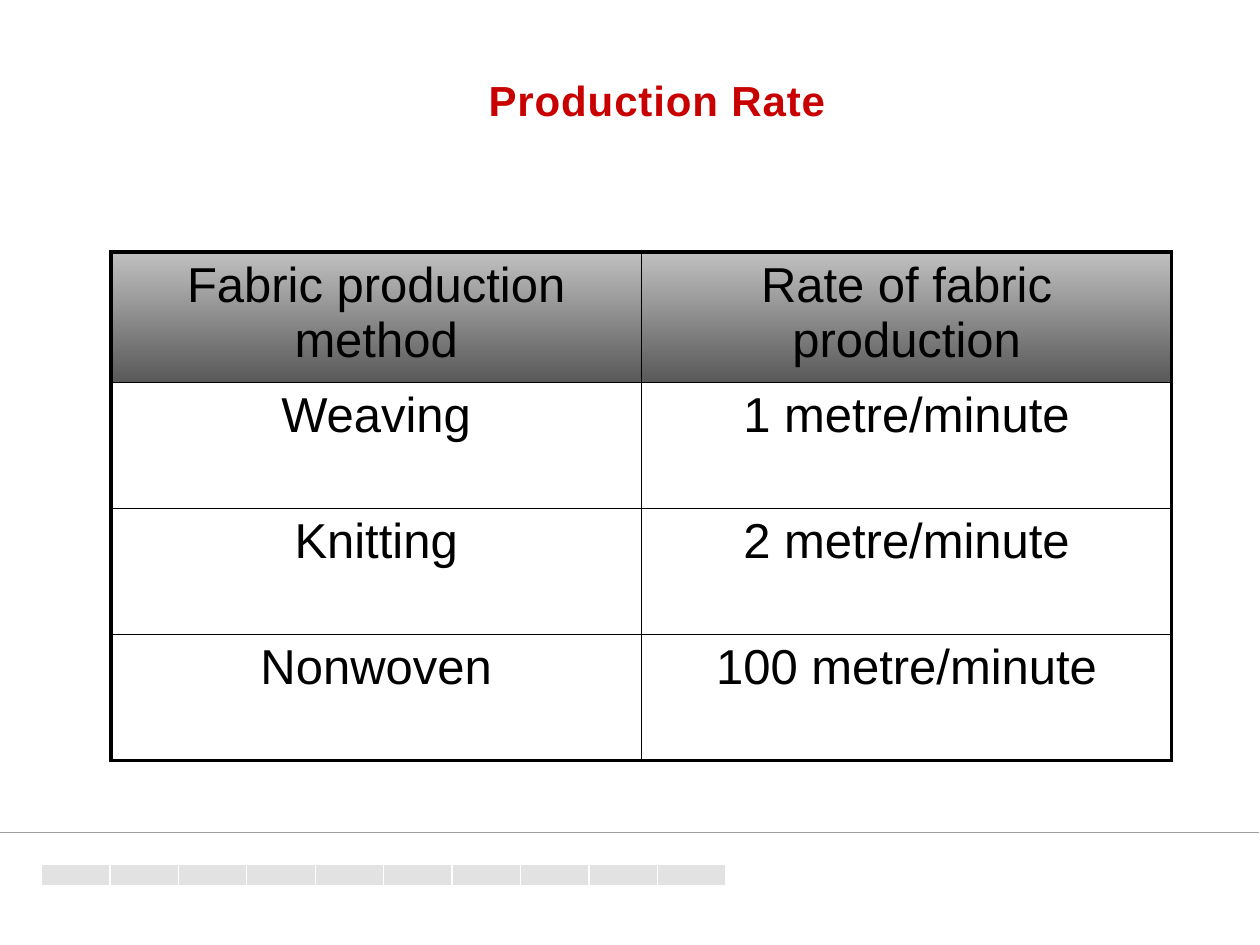
from dataclasses import dataclass

from lxml.etree import SubElement
from pptx import Presentation
from pptx.dml.color import RGBColor
from pptx.enum.shapes import MSO_CONNECTOR, MSO_SHAPE
from pptx.enum.text import PP_ALIGN
from pptx.oxml.ns import qn
from pptx.util import Inches, Pt

BLACK = RGBColor(0x00, 0x00, 0x00)
WHITE = RGBColor(0xFF, 0xFF, 0xFF)
RED = RGBColor(0xC9, 0x00, 0x00)
BLOCK_GREY = RGBColor(0xE2, 0xE2, 0xE2)
RULE_GREY = RGBColor(0x9F, 0x9F, 0x9F)
HEADER_LIGHT = RGBColor(0xC0, 0xC0, 0xC0)
HEADER_DARK = RGBColor(0x59, 0x59, 0x59)

SLIDE_WIDTH, SLIDE_HEIGHT = Inches(10), Inches(7.5)
OUTER_BORDER, INNER_BORDER = Pt(2.25), Pt(1)
BLOCK_COUNT = 10


@dataclass(frozen=True)
class Area:
    left: float
    top: float
    width: float
    height: float

    def lengths(self) -> tuple[int, ...]:
        return tuple(Inches(value) for value in (self.left, self.top, self.width, self.height))

    def column(self, index: int, count: int) -> "Area":
        width = self.width / count
        return Area(self.left + index * width, self.top, width, self.height)


@dataclass(frozen=True)
class ProductionRate:
    method: str
    rate: str


FOOTER_STRIP = Area(0.33, 6.86, 5.43, 0.17)
TITLE_AREA = Area(3.02, 0.5, 4.39, 0.5)
TABLE_AREA = Area(0.88, 2, 8.42, 4)
RATES = [
    ProductionRate("Fabric production method", "Rate of fabric production"),
    ProductionRate("Weaving", "1 metre/minute"),
    ProductionRate("Knitting", "2 metre/minute"),
    ProductionRate("Nonwoven", "100 metre/minute"),
]


def write_text(frame, text: str, *, size: float, color: RGBColor,
               bold: bool = False, spacing: float = 0) -> None:
    frame.word_wrap = True
    paragraph = frame.paragraphs[0]
    paragraph.alignment = PP_ALIGN.CENTER
    run = paragraph.add_run()
    run.text = text
    run.font.name = "Arial"
    run.font.size = Pt(size)
    run.font.bold = bold
    run.font.color.rgb = color
    if spacing:
        run.font._element.set("spc", str(round(spacing * 100)))


def draw_footer(slide) -> None:
    for index in range(BLOCK_COUNT):
        area = FOOTER_STRIP.column(index, BLOCK_COUNT)
        block = slide.shapes.add_shape(MSO_SHAPE.RECTANGLE, *area.lengths())
        block.shadow.inherit = False
        block.fill.solid()
        block.fill.fore_color.rgb = BLOCK_GREY
        block.line.color.rgb = WHITE
        block.line.width = Pt(0.75)
    height = Inches(6.61)
    rule = slide.shapes.add_connector(MSO_CONNECTOR.STRAIGHT, 0, height, Inches(9.99), height)
    rule.line.color.rgb = RULE_GREY
    rule.line.width = Pt(0.75)
    SubElement(rule._element.spPr, qn("a:effectLst"))


def draw_title(slide) -> None:
    frame = slide.shapes.add_textbox(*TITLE_AREA.lengths()).text_frame
    frame.margin_top = Inches(0.09)
    write_text(frame, "Production Rate", size=24, color=RED, bold=True, spacing=0.5)


def set_borders(cell, outer_sides: dict[str, bool]) -> None:
    properties = cell._tc.get_or_add_tcPr()
    for side, is_outer in outer_sides.items():
        width = OUTER_BORDER if is_outer else INNER_BORDER
        border = SubElement(properties, qn(f"a:ln{side}"), w=str(int(width)))
        fill = SubElement(border, qn("a:solidFill"))
        SubElement(fill, qn("a:srgbClr"), val=str(BLACK))


def fill_cell(cell, is_header: bool) -> None:
    if not is_header:
        cell.fill.background()
        return
    cell.fill.gradient()
    cell.fill.gradient_angle = 270
    for stop, position, color in zip(cell.fill.gradient_stops, (0, 1), (HEADER_LIGHT, HEADER_DARK)):
        stop.position = position
        stop.color.rgb = color


def draw_table(slide) -> None:
    table = slide.shapes.add_table(len(RATES), 2, *TABLE_AREA.lengths()).table
    for row, entry in enumerate(RATES):
        for column, text in enumerate((entry.method, entry.rate)):
            cell = table.cell(row, column)
            set_borders(cell, {"L": column == 0, "R": column == 1,
                               "T": row == 0, "B": row == len(RATES) - 1})
            fill_cell(cell, is_header=row == 0)
            write_text(cell.text_frame, text, size=28, color=BLACK)


def main() -> None:
    presentation = Presentation()
    presentation.slide_width, presentation.slide_height = SLIDE_WIDTH, SLIDE_HEIGHT
    slide = presentation.slides.add_slide(presentation.slide_layouts[6])
    draw_footer(slide)
    draw_title(slide)
    draw_table(slide)
    presentation.save("out.pptx")


if __name__ == "__main__":
    main()
